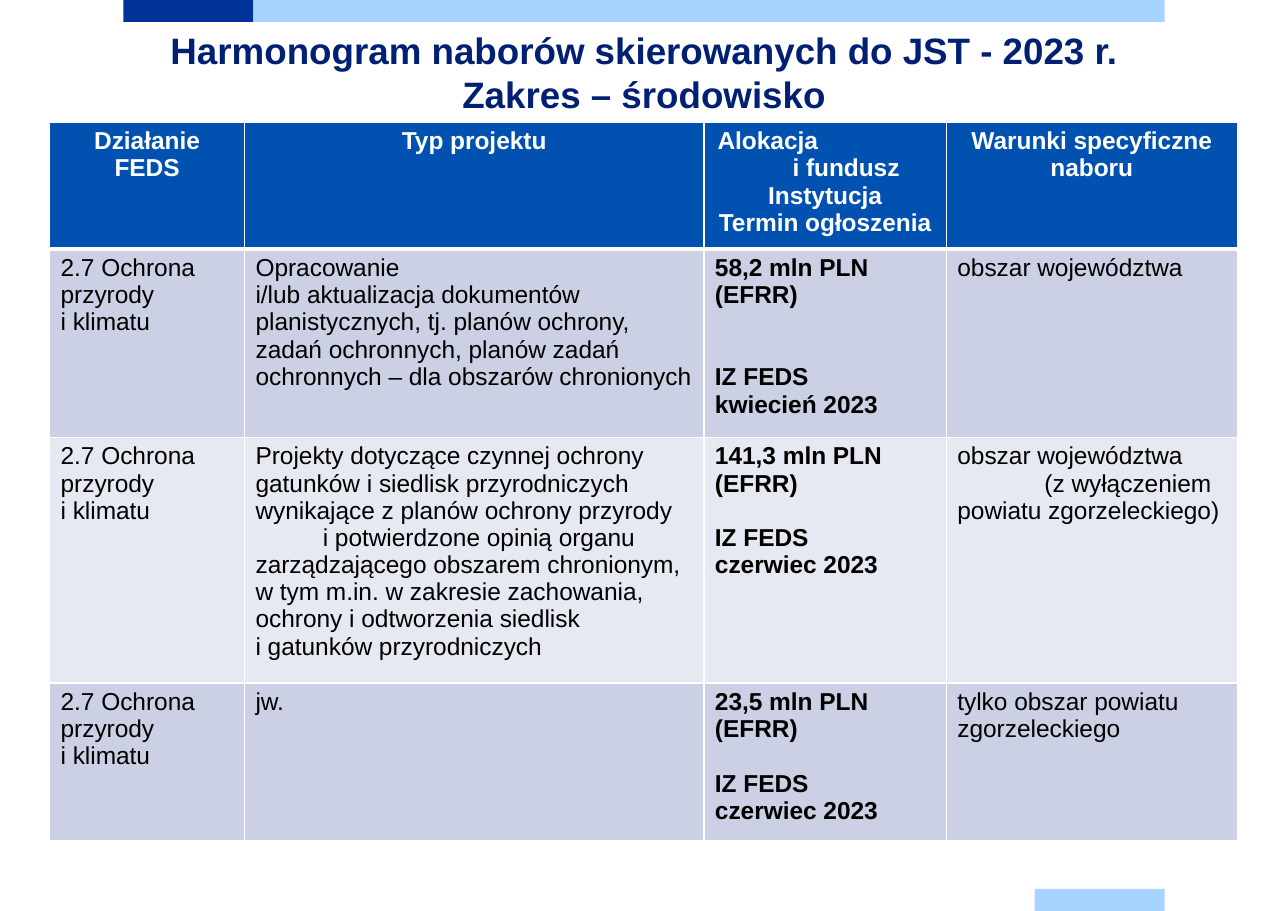
from dataclasses import dataclass
from lxml.etree import SubElement
from pptx import Presentation
from pptx.dml.color import RGBColor
from pptx.enum.shapes import MSO_SHAPE
from pptx.enum.text import MSO_ANCHOR, PP_ALIGN
from pptx.oxml.ns import qn
from pptx.util import Inches, Pt


@dataclass(frozen=True)
class Theme:
    """Colours, font and type sizes of the deck."""
    font: str = "Arial"
    title: str = "002073"
    navy: str = "003399"
    sky: str = "A6D3FF"
    header: str = "0051B0"
    bands: tuple = ("CCD0E4", "E7E9F2")
    white: str = "FFFFFF"
    black: str = "000000"
    title_size: int = 24
    size: int = 16


T = Theme()
W, H = 11.69, 8.27
TITLE = ["Harmonogram naborów skierowanych do JST - 2023 r.", "Zakres – środowisko"]
COLS = [1.77, 4.17, 2.2, 2.64]
ROWS = [1.15, 1.71, 2.23, 1.43]
LINE = 18
ACTION = ["2.7 Ochrona przyrody \vi klimatu"]
HEADER = [
    ["Działanie FEDS"],
    ["Typ projektu"],
    [("Alokacja", {"right": 1.04}), ("i fundusz", {"left": 0.38}), "Instytucja", "Termin ogłoszenia"],
    ["Warunki specyficzne naboru"],
]


def funding(amount, month, gap=1):
    """Return the paragraphs on allocation, institution and date."""
    return [f"{amount} mln PLN (EFRR)", ("IZ FEDS", {"before": gap * LINE}), f"{month} 2023"]


CALLS = [
    [ACTION,
     ["Opracowanie \vi/lub aktualizacja dokumentów planistycznych, tj. planów ochrony, "
      "zadań ochronnych, planów zadań ochronnych – dla obszarów chronionych"],
     funding("58,2", "kwiecień", 2),
     ["obszar województwa"]],
    [ACTION,
     ["Projekty dotyczące czynnej ochrony gatunków i siedlisk przyrodniczych "
      "wynikające z planów ochrony przyrody",
      ("i potwierdzone opinią organu zarządzającego obszarem chronionym, \vw tym m.in. w zakresie "
       "zachowania, ochrony i odtworzenia siedlisk \vi gatunków przyrodniczych", {"indent": 0.61})],
     funding("141,3", "czerwiec"),
     ["obszar województwa", ("(z wyłączeniem powiatu zgorzeleckiego)", {"indent": 0.79})]],
    [ACTION, ["jw."], funding("23,5", "czerwiec"), ["tylko obszar powiatu zgorzeleckiego"]],
]


def write(p, text, size=T.size, color=T.black, bold=False, align=PP_ALIGN.LEFT,
          before=0, left=0, right=0, indent=0):
    """Fill a paragraph with formatted text."""
    p.text = text
    p.alignment = align
    p.space_before = Pt(before)
    pPr = p._p.get_or_add_pPr()
    for name, value in (("marL", left), ("marR", right), ("indent", indent)):
        pPr.set(name, str(Inches(value)))
    for br in p._p.findall(qn("a:br")):
        SubElement(br, qn("a:rPr"), sz=str(size * 100))
    for r in p.runs:
        r.font.name, r.font.size, r.font.bold = T.font, Pt(size), bold
        r.font.color.rgb = RGBColor.from_string(color)


def write_all(tf, items, **fmt):
    """Write each item, plain or with its own format, as a paragraph."""
    for i, item in enumerate(items):
        text, own = (item, {}) if isinstance(item, str) else item
        write(tf.add_paragraph() if i else tf.paragraphs[0], text, **{**fmt, **own})


def add_bar(s, box, color):
    """Draw one plain decorative bar."""
    sp = s.shapes.add_shape(MSO_SHAPE.RECTANGLE, *map(Inches, box))
    sp.shadow.inherit = False
    sp.fill.solid()
    sp.fill.fore_color.rgb = RGBColor.from_string(color)
    sp.line.fill.background()


def add_bars(s, box, unit=1.18, height=0.2):
    """Place the bars at the top and bottom edges of the box."""
    x, y, w, h = box
    add_bar(s, (x, y, unit, height), T.navy)
    add_bar(s, (x + unit, y, w - unit, height), T.sky)
    add_bar(s, (x + w - unit, y + h - height, unit, height), T.sky)


def add_title(s, box):
    """Move the title placeholder into the box and fill it."""
    sp = s.shapes.title
    sp.left, sp.top, sp.width, sp.height = map(Inches, box)
    tf = sp.text_frame
    tf.word_wrap = True
    tf.vertical_anchor = MSO_ANCHOR.MIDDLE
    write_all(tf, TITLE, size=T.title_size, color=T.title, bold=True, align=PP_ALIGN.CENTER)


def style_cell(cell, fill, top, bottom):
    """Give a cell its white borders and its fill."""
    tcPr = cell._tc.get_or_add_tcPr()
    for side, width in (("L", 1), ("R", 1), ("T", top), ("B", bottom)):
        ln = SubElement(tcPr, qn(f"a:ln{side}"), w=str(Pt(width)))
        SubElement(SubElement(ln, qn("a:solidFill")), qn("a:srgbClr"), val=T.white)
    cell.fill.solid()
    cell.fill.fore_color.rgb = RGBColor.from_string(fill)


def add_schedule(s, box):
    """Build the table of calls in the box."""
    table = s.shapes.add_table(len(ROWS), len(COLS), *map(Inches, box)).table
    for col, width in zip(table.columns, COLS):
        col.width = Inches(width)
    for row, height in zip(table.rows, ROWS):
        row.height = Inches(height)
    for i, texts in enumerate([HEADER, *CALLS]):
        for j, items in enumerate(texts):
            cell = table.cell(i, j)
            if i == 0:
                style_cell(cell, T.header, 1, 3)
                write_all(cell.text_frame, items, color=T.white, bold=True, align=PP_ALIGN.CENTER)
            else:
                style_cell(cell, T.bands[(i - 1) % 2], 3 if i == 1 else 1, 1)
                write_all(cell.text_frame, items, bold=j == 2)


def main():
    """Build and save the slide."""
    prs = Presentation()
    prs.slide_width, prs.slide_height = Inches(W), Inches(H)
    s = prs.slides.add_slide(prs.slide_layouts[5])
    add_bars(s, (1.12, 0, 9.45, H))
    add_title(s, (1.16, 0.2, 9.37, 0.91))
    add_schedule(s, (0.45, 1.11, sum(COLS), sum(ROWS)))
    prs.save("out.pptx")


if __name__ == "__main__":
    main()
